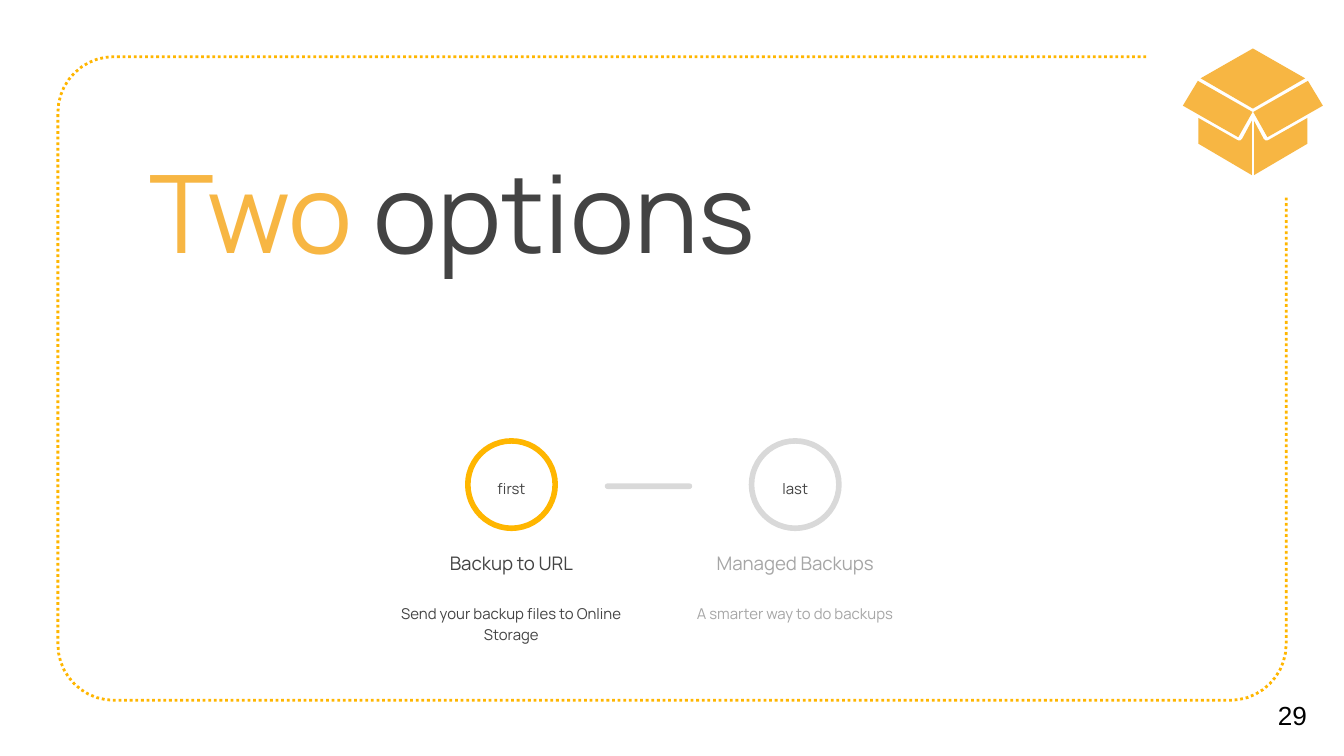
from math import cos, sin, radians
from pptx import Presentation
from pptx.dml.color import RGBColor
from pptx.enum import dml, shapes as sh, text as tx
from pptx.util import Pt

GOLD, AMBER, DARK, GREY, PALE = "FFB600", "F7B643", "434343", "A6A6A6", "D9D9D9"
TITLE = [("Two ", AMBER), ("options", DARK)]
STEPS = [
    ("first", "Backup to URL", "Send your backup files to Online Storage", GOLD, DARK, 138),
    ("last", "Managed Backups", "A smarter way to do backups", PALE, GREY, 134.6),
]
MID, GAP = 274, 152
LEFT, TOP, RIGHT, BASE, RAD = 31, 30.4, 689, 375.2, 30
AXIS = 671.2
LID = [(0, 26), (28, 42), (0, 58.2), (-28, 42)]
FLAP = [(29.5, 43.3), (37.5, 56.6), (7.8, 73.5), (0.2, 60)]
SIDE = [(29.2, 63.2), (29.2, 77), (0.6, 93.8), (0.6, 64.8),
        (5.8, 74.5), (6.8, 75.3), (8, 75.2)]


def color(code):
    return RGBColor.from_string(code)


def paint(shape, fill=None, line=None, width=3):
    shape.shadow.inherit = False
    if fill:
        shape.fill.solid()
        shape.fill.fore_color.rgb = color(fill)
    else:
        shape.fill.background()
    if line:
        shape.line.color.rgb = color(line)
        shape.line.width = Pt(width)
    else:
        shape.line.fill.background()
    return shape


def outline(points, close=True):
    pts = [(x * 100, y * 100) for x, y in points]
    form = slide.shapes.build_freeform(*pts[0], scale=127)
    form.add_line_segments(pts[1:], close=close)
    return form.convert_to_shape()


def corner(x, y, start, end):
    step = -9 if end < start else 9
    return [(x + RAD * cos(radians(a)), y + RAD * sin(radians(a)))
            for a in range(start, end + step, step)]


def write(box, runs, size, font="Manrope", align="LEFT", anchor="TOP", space=None):
    frame = box.text_frame
    frame.word_wrap = True
    frame.auto_size = tx.MSO_AUTO_SIZE.NONE
    frame.vertical_anchor = tx.MSO_ANCHOR[anchor]
    frame.margin_left = frame.margin_right = Pt(7.2)
    frame.margin_top = frame.margin_bottom = Pt(7.2)
    para = frame.paragraphs[0]
    para.alignment = tx.PP_ALIGN[align]
    if space:
        para.line_spacing = space
    for words, code in runs:
        run = para.add_run()
        run.text = words
        run.font.name = font
        run.font.size = Pt(size)
        run.font.color.rgb = color(code)


def label(words, code, size, x, y, w, h, **look):
    box = slide.shapes.add_textbox(Pt(x), Pt(y), Pt(w), Pt(h))
    write(box, [(words, code)], size, **look)


def center(words, code, size, mid, y, w, h, anchor="TOP"):
    label(words, code, size, mid - w / 2, y, w, h,
          align="CENTER", anchor=anchor, space=1.15)


deck = Presentation()
deck.slide_width, deck.slide_height = Pt(720), Pt(405)
slide = deck.slides.add_slide(deck.slide_layouts[5])

border = outline(
    [(614, TOP)]
    + corner(LEFT + RAD, TOP + RAD, 270, 180)
    + corner(LEFT + RAD, BASE - RAD, 180, 90)
    + corner(RIGHT - RAD, BASE - RAD, 90, 0)
    + [(RIGHT, 105)], close=False)
paint(border, line=GOLD, width=1.5)
border.line.dash_style = dml.MSO_LINE.ROUND_DOT

title = slide.shapes.title
title.left, title.top, title.width, title.height = Pt(72.7), Pt(70.6), Pt(540.7), Pt(67.7)
write(title, TITLE, 58)
label("29", "000000", 14, 677.5, 361.5, 42.5, 43.2, font="Arial", anchor="MIDDLE")

for i, (order, head, note, ring, ink, width) in enumerate(STEPS):
    mid = MID + i * GAP
    disc = slide.shapes.add_shape(
        sh.MSO_SHAPE.OVAL, Pt(mid - 23.4), Pt(236.2), Pt(46.8), Pt(46.8))
    paint(disc, line=ring)
    center(order, DARK, 8, mid, 248.4, 34.6, 25.2)
    center(head, ink, 10, mid, 279.4, 134.6, 35.3, anchor="BOTTOM")
    center(note, ink, 8, mid, 315.4, width, 58.3)

bar = slide.shapes.add_shape(
    sh.MSO_SHAPE.ROUNDED_RECTANGLE, Pt(324), Pt(259), Pt(46.8), Pt(3))
bar.adjustments[0] = 0.5
paint(bar, fill=PALE)

paint(outline([(AXIS + x, y) for x, y in LID]), fill=AMBER)
for part in (SIDE, FLAP):
    for way in (1, -1):
        paint(outline([(AXIS + way * x, y) for x, y in part]), fill=AMBER)

deck.save("out.pptx")
